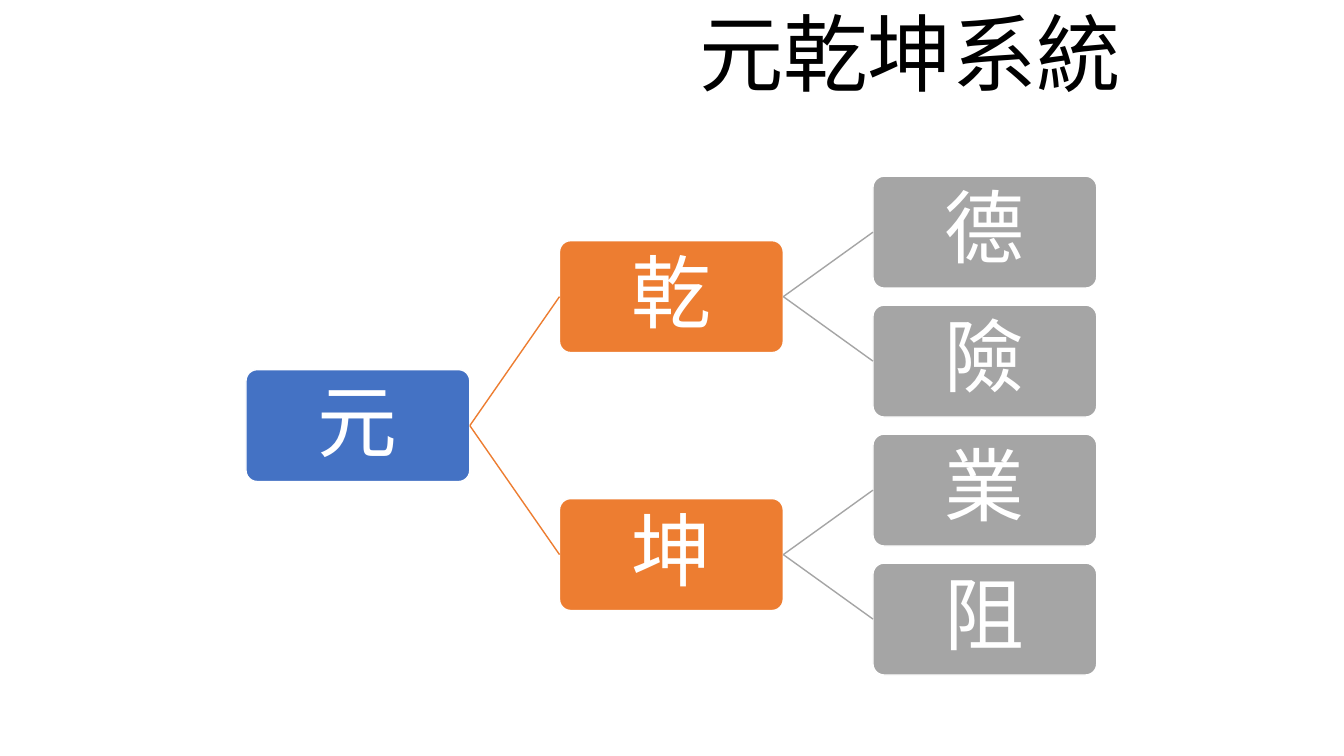
from lxml.etree import SubElement
from pptx import Presentation
from pptx.dml.color import RGBColor
from pptx.enum.shapes import MSO_CONNECTOR, MSO_SHAPE
from pptx.enum.text import MSO_ANCHOR, MSO_AUTO_SIZE, PP_ALIGN
from pptx.oxml.ns import qn
from pptx.util import Cm, Pt

# Content: each node is (text, children)
TITLE = "元乾坤系統"
TREE = ("元", [
    ("乾", [("德", []), ("險", [])]),
    ("坤", [("業", []), ("阻", [])]),
])

# Format
FONT = "Noto Sans CJK SC"
COLORS = {"title": "000000", "text": "FFFFFF", "outline": "FFFFFF"}
LEVEL_COLORS = ["4472C4", "ED7D31", "A5A5A5"]

# Grid in centimetres
LEFT, TOP = 6.2, 4.44
NODE_WIDTH, NODE_HEIGHT = 5.64, 2.82
COLUMN_STEP, ROW_STEP = 7.9, 3.25
RIGHT_SITE, LEFT_SITE = 3, 1


def write_text(shape, text, size, color, align=PP_ALIGN.CENTER,
               margin_x=0.2, margin_y=0.2, space_after=0):
    frame = shape.text_frame
    frame.word_wrap = True
    frame.auto_size = MSO_AUTO_SIZE.NONE
    frame.vertical_anchor = MSO_ANCHOR.MIDDLE
    frame.margin_left = frame.margin_right = Cm(margin_x)
    frame.margin_top = frame.margin_bottom = Cm(margin_y)
    paragraph = frame.paragraphs[0]
    paragraph.alignment = align
    paragraph.line_spacing = 0.9
    paragraph.space_before = Pt(0)
    paragraph.space_after = Pt(space_after)
    run = paragraph.add_run()
    run.text = text
    run.font.size = Pt(size)
    run.font.name = FONT
    run.font.color.rgb = RGBColor.from_string(color)
    # East Asian typeface
    SubElement(run.font._element, qn("a:ea"), typeface=FONT)


def add_node(slide, text, level, row):
    shape = slide.shapes.add_shape(
        MSO_SHAPE.ROUNDED_RECTANGLE,
        Cm(LEFT + level * COLUMN_STEP), Cm(TOP + row * ROW_STEP),
        Cm(NODE_WIDTH), Cm(NODE_HEIGHT))
    shape.adjustments[0] = 0.1
    shape.shadow.inherit = False
    shape.fill.solid()
    shape.fill.fore_color.rgb = RGBColor.from_string(LEVEL_COLORS[level])
    shape.line.color.rgb = RGBColor.from_string(COLORS["outline"])
    shape.line.width = Pt(1)
    write_text(shape, text, size=57, color=COLORS["text"], space_after=4)
    return shape


def add_branch(slide, parent, child, color):
    connector = slide.shapes.add_connector(MSO_CONNECTOR.STRAIGHT, 0, 0, 0, 0)
    connector.begin_connect(parent, RIGHT_SITE)
    connector.end_connect(child, LEFT_SITE)
    connector.line.color.rgb = RGBColor.from_string(color)
    connector.line.width = Pt(1)
    SubElement(connector._element.spPr, qn("a:effectLst"))


def add_tree(slide, node, level=0, first_row=0):
    """Draw a node beside its children; return its shape, row and next free row."""
    text, children = node
    next_row = first_row
    child_shapes, child_rows = [], []
    for child in children:
        child_shape, child_row, next_row = add_tree(slide, child, level + 1, next_row)
        child_shapes.append(child_shape)
        child_rows.append(child_row)
    if children:
        row = sum(child_rows) / len(child_rows)
    else:
        row, next_row = first_row, first_row + 1
    shape = add_node(slide, text, level, row)
    for child_shape in child_shapes:
        add_branch(slide, shape, child_shape, LEVEL_COLORS[level + 1])
    return shape, row, next_row


def main():
    presentation = Presentation()
    presentation.slide_width, presentation.slide_height = Cm(33.87), Cm(19.05)
    slide = presentation.slides.add_slide(presentation.slide_layouts[5])

    # Title
    title = slide.shapes.title
    title.left, title.top, title.width, title.height = Cm(17.37), Cm(0), Cm(14.17), Cm(2.95)
    write_text(title, TITLE, size=60.3, color=COLORS["title"],
               align=PP_ALIGN.LEFT, margin_x=0.25, margin_y=0)

    # Hierarchy
    add_tree(slide, TREE)
    presentation.save("out.pptx")


if __name__ == "__main__":
    main()
